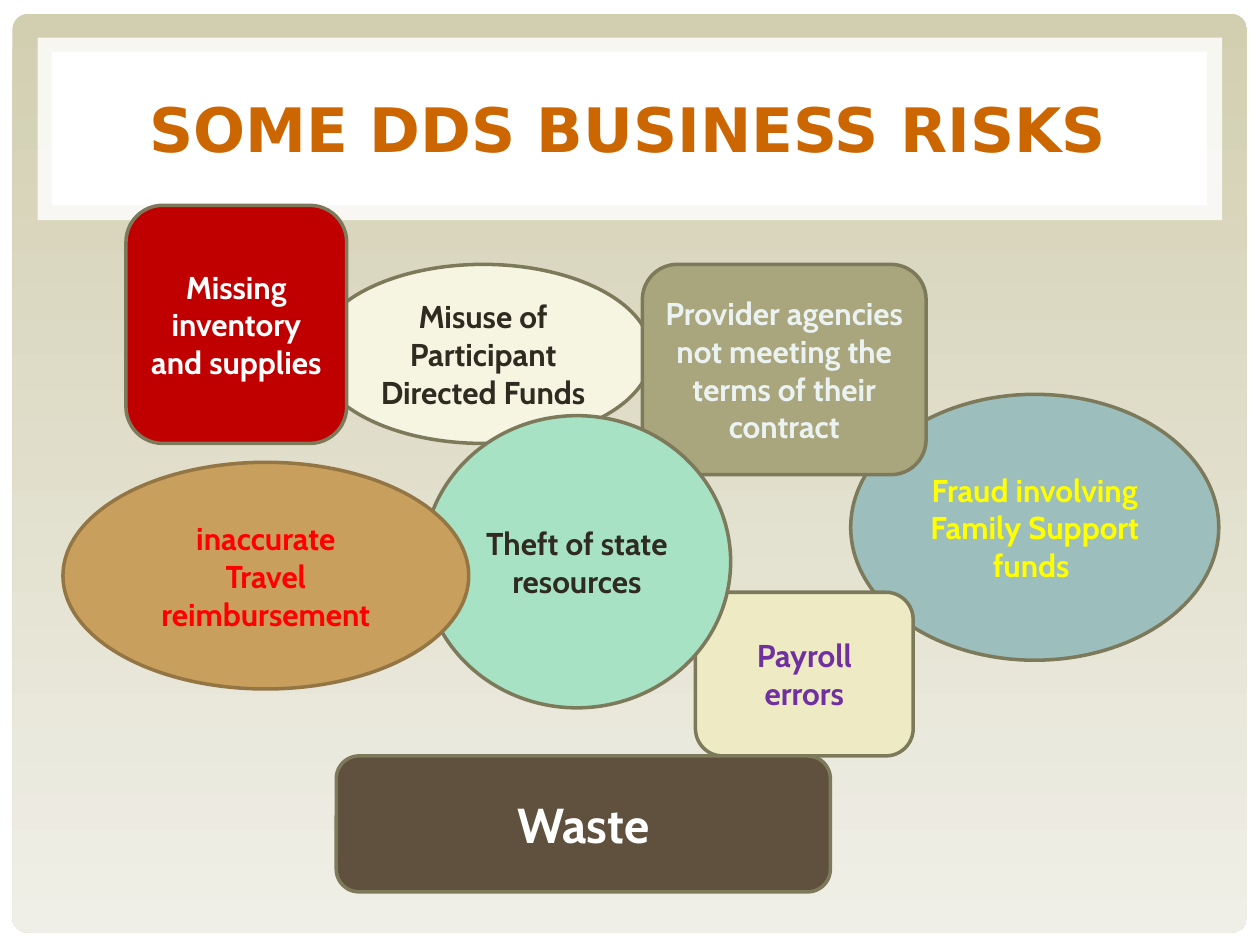
from dataclasses import dataclass

from lxml import etree
from pptx import Presentation
from pptx import util as u
from pptx.dml.color import RGBColor
from pptx.enum import shapes, text
from pptx.oxml.ns import qn

RECT = shapes.MSO_SHAPE.RECTANGLE
ROUND = shapes.MSO_SHAPE.ROUNDED_RECTANGLE
OVAL = shapes.MSO_SHAPE.OVAL


@dataclass(frozen=True)
class Theme:
    title_font: str = "DejaVu Sans"
    body_font: str = "Cabin"
    title_size: int = 35
    body_size: int = 18
    large_size: int = 28
    line_width: int = 2
    white: str = "FFFFFF"
    ink: str = "2F2B20"
    title: str = "CC6600"
    backdrop_top: str = "D2CFB1"
    backdrop_bottom: str = "F0EFE7"
    outline: str = "7D7A5C"
    tan_outline: str = "947645"
    cream: str = "F6F5E2"
    blue: str = "9CBEBD"
    yellow: str = "FFFF00"
    straw: str = "EDEAC4"
    purple: str = "7030A0"
    olive: str = "A9A57C"
    pale: str = "EBF2F2"
    mint: str = "A8E2C5"
    tan: str = "C89F5D"
    red: str = "FF0000"
    dark_red: str = "C00000"
    brown: str = "5F513E"


def write(shape, content, *, font, size, color):
    """Fill a shape with bold centred text, one paragraph per line."""
    frame = shape.text_frame
    frame.word_wrap = True
    frame.vertical_anchor = text.MSO_ANCHOR.MIDDLE
    for index, line in enumerate(content.split("\n")):
        para = frame.add_paragraph() if index else frame.paragraphs[0]
        para.alignment = text.PP_ALIGN.CENTER
        span = para.add_run()
        span.text = line
        span.font.name = font
        span.font.size = u.Pt(size)
        span.font.bold = True
        span.font.color.rgb = RGBColor.from_string(color)


class Painter:
    def __init__(self, page, theme):
        self.page = page
        self.theme = theme

    def panel(self, kind, place, fill, opacity=100):
        """Add a borderless shape; place is left, top, width, height in cm."""
        shape = self.page.shapes.add_shape(kind, *map(u.Cm, place))
        shape.shadow.inherit = False
        shape.line.fill.background()
        shape.fill.solid()
        shape.fill.fore_color.rgb = RGBColor.from_string(fill)
        if opacity < 100:
            color = shape.fill._xPr.find(qn("a:solidFill"))[0]
            etree.SubElement(color, qn("a:alpha"), val=str(opacity * 1000))
        return shape

    def backdrop(self, place):
        theme = self.theme
        shape = self.panel(ROUND, place, theme.white)
        shape.adjustments[0] = 0.017
        shape.fill.gradient()
        shape.fill.gradient_angle = 270
        colors = (theme.backdrop_top, theme.backdrop_bottom)
        for stop, color in zip(shape.fill.gradient_stops, colors):
            stop.color.rgb = RGBColor.from_string(color)

    def title(self, place, content):
        box = self.page.shapes.add_textbox(*map(u.Cm, place))
        write(box, content, font=self.theme.title_font,
              size=self.theme.title_size, color=self.theme.title)

    def risk(self, kind, place, content, fill, color, outline=None, size=None):
        theme = self.theme
        shape = self.panel(kind, place, fill)
        shape.line.color.rgb = RGBColor.from_string(outline or theme.outline)
        shape.line.width = u.Pt(theme.line_width)
        write(shape, content, font=theme.body_font,
              size=size or theme.body_size, color=color)


def main():
    deck = Presentation()
    deck.slide_width, deck.slide_height = u.Cm(25.4), u.Cm(19.05)
    theme = Theme()
    painter = Painter(deck.slides.add_slide(deck.slide_layouts[6]), theme)

    painter.panel(RECT, (0, 0, 25.4, 19.05), theme.white)
    painter.backdrop((0.25, 0.28, 24.89, 18.52))
    painter.panel(RECT, (0.76, 0.76, 23.88, 3.68), theme.white, opacity=83)
    painter.panel(RECT, (1.04, 1.04, 23.29, 3.1), theme.white)
    painter.title((1.19, 1.14, 22.94, 2.9), "SOME DDS BUSINESS RISKS")

    painter.risk(OVAL, (6.35, 5.33, 6.78, 3.61),
                 "Misuse of Participant Directed Funds", theme.cream, theme.ink)
    painter.risk(OVAL, (17.15, 7.95, 7.42, 5.36),
                 "Fraud involving\nFamily Support funds ", theme.blue, theme.yellow)
    painter.risk(ROUND, (14.02, 11.94, 4.39, 3.3),
                 "Payroll errors", theme.straw, theme.purple)
    painter.risk(ROUND, (12.95, 5.33, 5.72, 4.24),
                 "Provider agencies not meeting the terms of their contract",
                 theme.olive, theme.pale)
    painter.risk(OVAL, (8.53, 8.38, 6.2, 5.89),
                 "Theft of state resources", theme.mint, theme.ink)
    painter.risk(OVAL, (1.27, 9.32, 8.18, 4.57),
                 "inaccurate\nTravel reimbursement", theme.tan, theme.red,
                 outline=theme.tan_outline)
    painter.risk(ROUND, (2.54, 4.14, 4.45, 4.8),
                 "Missing inventory\nand supplies", theme.dark_red, theme.white)
    painter.risk(ROUND, (6.78, 15.24, 9.96, 2.74),
                 "Waste", theme.brown, theme.white, size=theme.large_size)

    deck.save("out.pptx")


if __name__ == "__main__":
    main()
